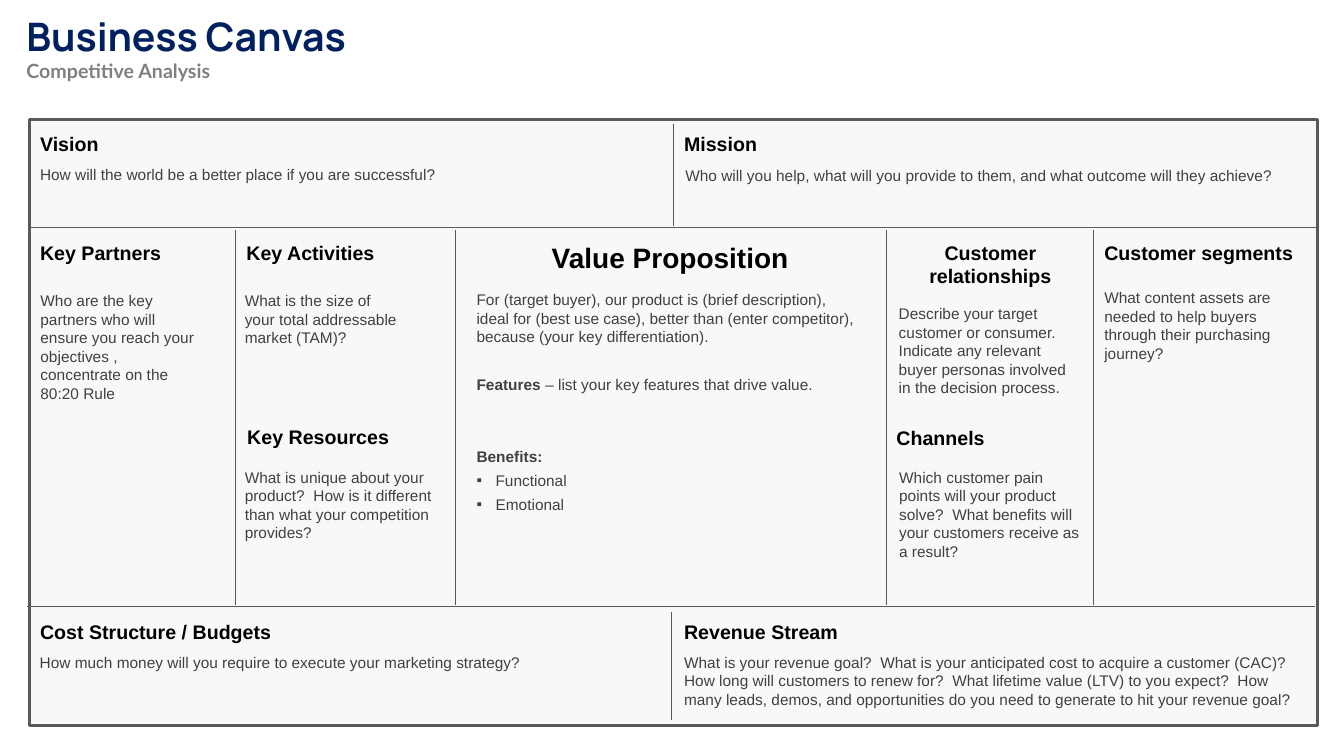
from lxml.etree import SubElement
from pptx import Presentation
from pptx.dml.color import RGBColor
from pptx.enum.shapes import MSO_CONNECTOR, MSO_SHAPE
from pptx.enum.text import MSO_ANCHOR, MSO_AUTO_SIZE, PP_ALIGN
from pptx.oxml.ns import qn
from pptx.util import Cm, Pt

TITLE = [
    ("Business Canvas", {"name": "Manrope", "size": Pt(28), "bold": True}, "002060"),
    ("Competitive Analysis", {"name": "Lato", "size": Pt(14), "bold": True}, "808080"),
]
HEADINGS = [
    ("Vision", 0.76, 3.2, 3.99),
    ("Mission", 16.99, 3.2, 3.99),
    ("Key Partners", 0.76, 5.94, 5.13),
    ("Key Activities", 5.96, 5.94, 5.49),
    ("Key Resources", 5.98, 10.58, 5.44),
    ("Channels", 22.34, 10.6, 5.18),
    ("Customer segments", 27.58, 5.95, 5.54),
    ("Cost Structure / Budgets", 0.76, 15.5, 8.38),
    ("Revenue Stream", 16.99, 15.5, 6.2),
]
CENTRED_HEADINGS = [
    ("Customer relationships", 22.38, 5.94, 5.16, 2, 14),
    ("Value Proposition", 11.48, 5.94, 10.82, 1, 20),
]
QUESTIONS = [
    ("How will the world be a better place if you are successful?", 0.76, 4.04, 12, 1),
    ("Who will you help, what will you provide to them, and what outcome will they achieve?",
     17.02, 4.07, 16, 1),
    ("Who are the key partners who will ensure you reach your objectives , "
     "concentrate on the 80:20 Rule", 0.77, 7.22, 4.45, 6),
    ("What is the size of your total addressable market (TAM)?", 5.92, 7.22, 4.45, 3),
    ("What is unique about your product?  How is it different than what your "
     "competition provides?", 5.92, 11.66, 5.38, 4),
    ("Describe your target customer or consumer.  Indicate any relevant buyer "
     "personas involved in the decision process.", 22.4, 7.54, 5.11, 5),
    ("Which customer pain points will your product solve?  What benefits will your "
     "customers receive as a result?", 22.41, 11.66, 5.18, 5),
    ("What content assets are needed to help buyers through their purchasing journey?",
     27.58, 7.14, 5.51, 4),
    ("How much money will you require to execute your marketing strategy?",
     0.75, 16.33, 14, 1),
    ("What is your revenue goal?  What is your anticipated cost to acquire a customer "
     "(CAC)? How long will customers to renew for?  What lifetime value (LTV) to you "
     "expect?  How many leads, demos, and opportunities do you need to generate to hit "
     "your revenue goal?", 16.99, 16.33, 15.85, 3),
]
PROPOSITION = [
    ([("For (target buyer), our product is (brief description), ideal for (best use case), "
       "better than (enter competitor), because (your key differentiation).", False)], 0, False),
    ([("Features ", True), ("– list your key features that drive value.", False)], 1, False),
    ([("Benefits:", True)], 2, False),
    ([("Functional", False)], 0, True),
    ([("Emotional", False)], 0, True),
]
ROW_RULES = [(0.71, 33.17, 5.74), (0.69, 33.15, 15.29)]
COLUMN_RULES = [(left, 5.79, 15.24) for left in (5.92, 11.48, 22.33, 27.55)]
COLUMN_RULES += [(16.97, 3.12, 5.69), (16.92, 15.42, 18.14)]
GAP = 17.15
FRAME_FORMAT = {"word_wrap": True, "vertical_anchor": MSO_ANCHOR.TOP,
                "auto_size": MSO_AUTO_SIZE.SHAPE_TO_FIT_TEXT}


def colour(value):
    return RGBColor.from_string(value)


def set_all(target, values):
    for attribute, value in values.items():
        setattr(target, attribute, value)


def add_words(paragraph, words, font, ink):
    run = paragraph.add_run()
    run.text = words
    set_all(run.font, font)
    run.font.color.rgb = colour(ink)


def add_box(slide, left, top, width, lines, size):
    height = 0.27 + lines * size * 0.042
    frame = slide.shapes.add_textbox(Cm(left), Cm(top), Cm(width), Cm(height)).text_frame
    set_all(frame, FRAME_FORMAT)
    return frame


def add_heading(slide, words, left, top, width, lines=1, size=14, align=PP_ALIGN.LEFT):
    paragraph = add_box(slide, left, top, width, lines, size).paragraphs[0]
    paragraph.alignment = align
    add_words(paragraph, words, {"name": "Arial", "size": Pt(size), "bold": True}, "000000")


def add_body(paragraph, pieces):
    paragraph.space_after = Pt(3.85)
    for words, bold in pieces:
        add_words(paragraph, words, {"name": "Arial", "size": Pt(11), "bold": bold}, "404040")


def add_bullet(paragraph):
    properties = paragraph._p.get_or_add_pPr()
    properties.set("marL", str(Cm(0.48)))
    properties.set("indent", str(-Cm(0.48)))
    SubElement(properties, qn("a:buFont")).set("typeface", "Arial")
    SubElement(properties, qn("a:buChar")).set("char", "▪")


def add_rule(slide, *ends):
    rule = slide.shapes.add_connector(MSO_CONNECTOR.STRAIGHT, *map(Cm, ends))
    rule.line.color.rgb = colour("595959")
    rule.line.width = Pt(0.5)
    SubElement(rule._element.spPr, qn("a:effectLst"))


def add_title(slide):
    title = slide.shapes.title
    set_all(title, {"left": Cm(0.41), "top": Cm(0.18), "width": Cm(27.38), "height": Cm(2.06)})
    frame = title.text_frame
    set_all(frame, FRAME_FORMAT)
    for index, (words, font, ink) in enumerate(TITLE):
        paragraph = frame.add_paragraph() if index else frame.paragraphs[0]
        paragraph.alignment = PP_ALIGN.LEFT
        add_words(paragraph, words, font, ink)


def add_canvas(slide):
    canvas = slide.shapes.add_shape(MSO_SHAPE.RECTANGLE, Cm(0.74), Cm(3.02), Cm(32.46), Cm(15.27))
    canvas.shadow.inherit = False
    canvas.fill.solid()
    canvas.fill.fore_color.rgb = colour("F8F8F8")
    canvas.line.color.rgb = colour("595959")
    canvas.line.width = Pt(2)
    for left, right, top in ROW_RULES:
        add_rule(slide, left, top, right, top)
    for left, top, bottom in COLUMN_RULES:
        add_rule(slide, left, top, left, bottom)


def add_proposition(slide):
    frame = add_box(slide, 11.76, 7.19, 10.16, 14, 11)
    for index, (pieces, gaps, bulleted) in enumerate(PROPOSITION):
        paragraph = frame.add_paragraph() if index else frame.paragraphs[0]
        if gaps:
            paragraph.space_before = Pt(gaps * GAP)
        paragraph.space_after = Pt(3.85)
        if bulleted:
            add_bullet(paragraph)
        add_body(paragraph, pieces)


def main():
    deck = Presentation()
    set_all(deck, {"slide_width": Cm(33.87), "slide_height": Cm(19.05)})
    slide = deck.slides.add_slide(deck.slide_layouts[5])
    add_title(slide)
    add_canvas(slide)
    for heading in HEADINGS:
        add_heading(slide, *heading)
    for heading in CENTRED_HEADINGS:
        add_heading(slide, *heading, align=PP_ALIGN.CENTER)
    for words, left, top, width, lines in QUESTIONS:
        add_body(add_box(slide, left, top, width, lines, 11).paragraphs[0], [(words, False)])
    add_proposition(slide)
    deck.save("out.pptx")


if __name__ == "__main__":
    main()
